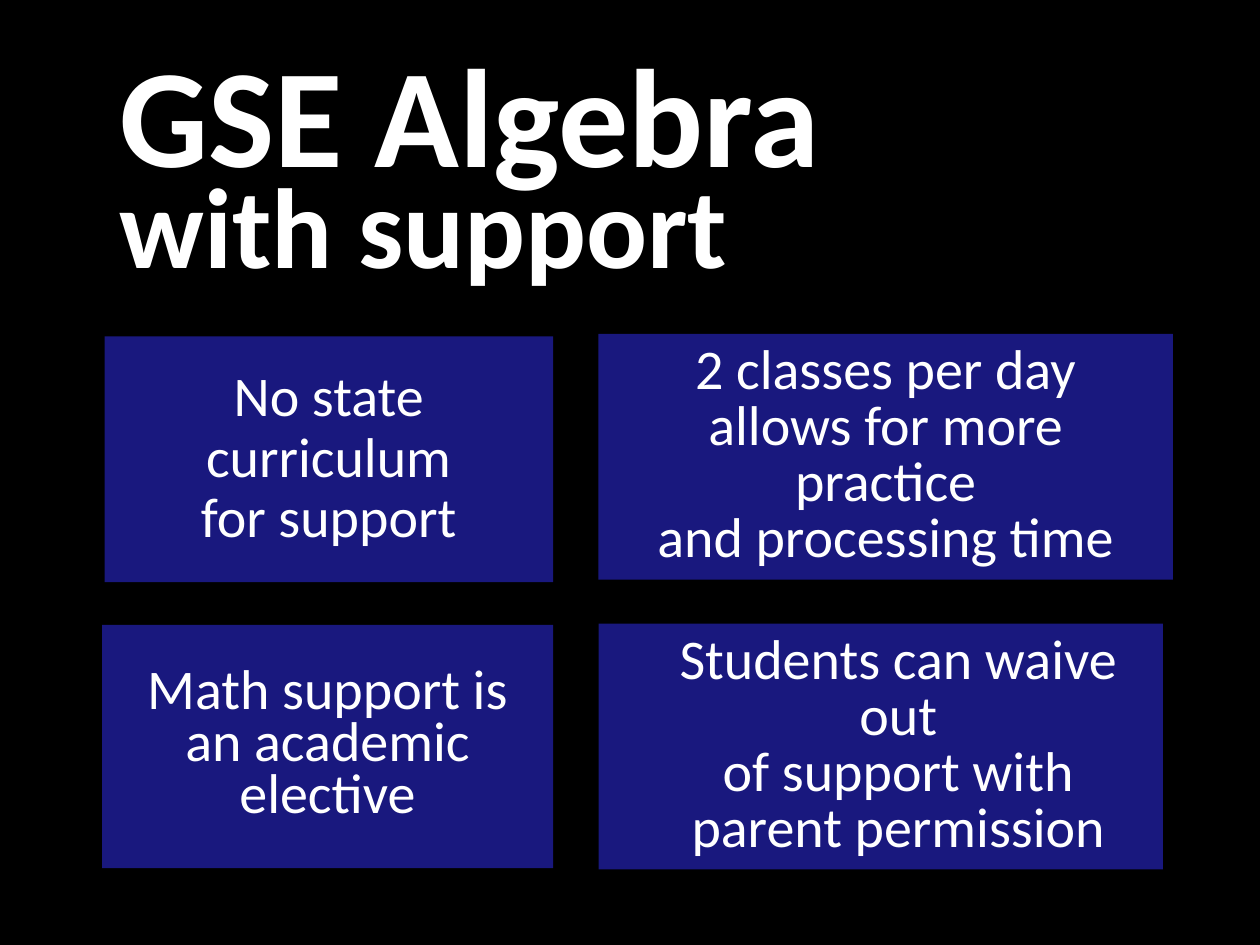
import pptx
import pptx.util
import pptx.dml.color
import pptx.enum.shapes
import pptx.enum.text

HUES = {"back": "000000", "card": "19187E", "text": "FFFFFF"}

deck = pptx.Presentation()
deck.slide_width = pptx.util.Inches(10)
deck.slide_height = pptx.util.Inches(7.5)
# One column and one row are each a hundredth of the slide
COL = deck.slide_width / 100
ROW = deck.slide_height / 100


def paint(fill, hue):
    fill.solid()
    fill.fore_color.rgb = pptx.dml.color.RGBColor.from_string(HUES[hue])


def write(shape, text, sizes, gap, after=0, bold=False, align="LEFT", pad=(0.1, 0.05, 0.1, 0.05)):
    """Fill a shape with one paragraph; sizes holds a point size per line."""
    frame = shape.text_frame
    frame.word_wrap = True
    frame.vertical_anchor = pptx.enum.text.MSO_ANCHOR.MIDDLE
    (frame.margin_left, frame.margin_top,
     frame.margin_right, frame.margin_bottom) = map(pptx.util.Inches, pad)
    para = frame.paragraphs[0]
    para.alignment = getattr(pptx.enum.text.PP_ALIGN, align)
    para.line_spacing = gap
    para.space_after = pptx.util.Pt(after)
    for i, (line, size) in enumerate(zip(text.split("\n"), sizes)):
        if i:
            para.add_line_break()
        run = para.add_run()
        run.text = line
        run.font.name = "Calibri"
        run.font.size = pptx.util.Pt(size)
        run.font.bold = bold
        paint(run.font.fill, "text")


slide = deck.slides.add_slide(deck.slide_layouts[6])
paint(slide.background.fill, "back")

title = slide.shapes.add_textbox(
    int(8.5 * COL), int(9.73 * ROW), int(84.5 * COL), int(21.87 * ROW))
write(title, "GSE Algebra\nwith support", (80, 65), pptx.util.Pt(55), bold=True)

# Left, top, width, height, line spacing, space after, padding, text
cards = [
    (8.3, 35.6, 35.6, 26, 0.9, 11, (0.15,) * 4,
     "No state curriculum\nfor support"),
    (47.5, 35.33, 45.6, 26, pptx.util.Pt(32), 5, (0.12,) * 4,
     "2 classes per day\nallows for more practice\nand processing time"),
    (8.1, 66.13, 35.8, 25.73, pptx.util.Pt(30), 11, (0.17,) * 4,
     "Math support is an academic elective"),
    (47.5, 66, 44.8, 26, pptx.util.Pt(32), 5, (0.4, 0.12, 0.12, 0.12),
     "Students can waive out\nof support with\nparent permission"),
]
for left, top, wide, high, gap, after, pad, text in cards:
    card = slide.shapes.add_shape(
        pptx.enum.shapes.MSO_SHAPE.RECTANGLE,
        int(left * COL), int(top * ROW), int(wide * COL), int(high * ROW))
    card.shadow.inherit = False
    paint(card.fill, "card")
    card.line.fill.background()
    write(card, text, (32,) * 3, gap, after=after, align="CENTER", pad=pad)

deck.save("out.pptx")
